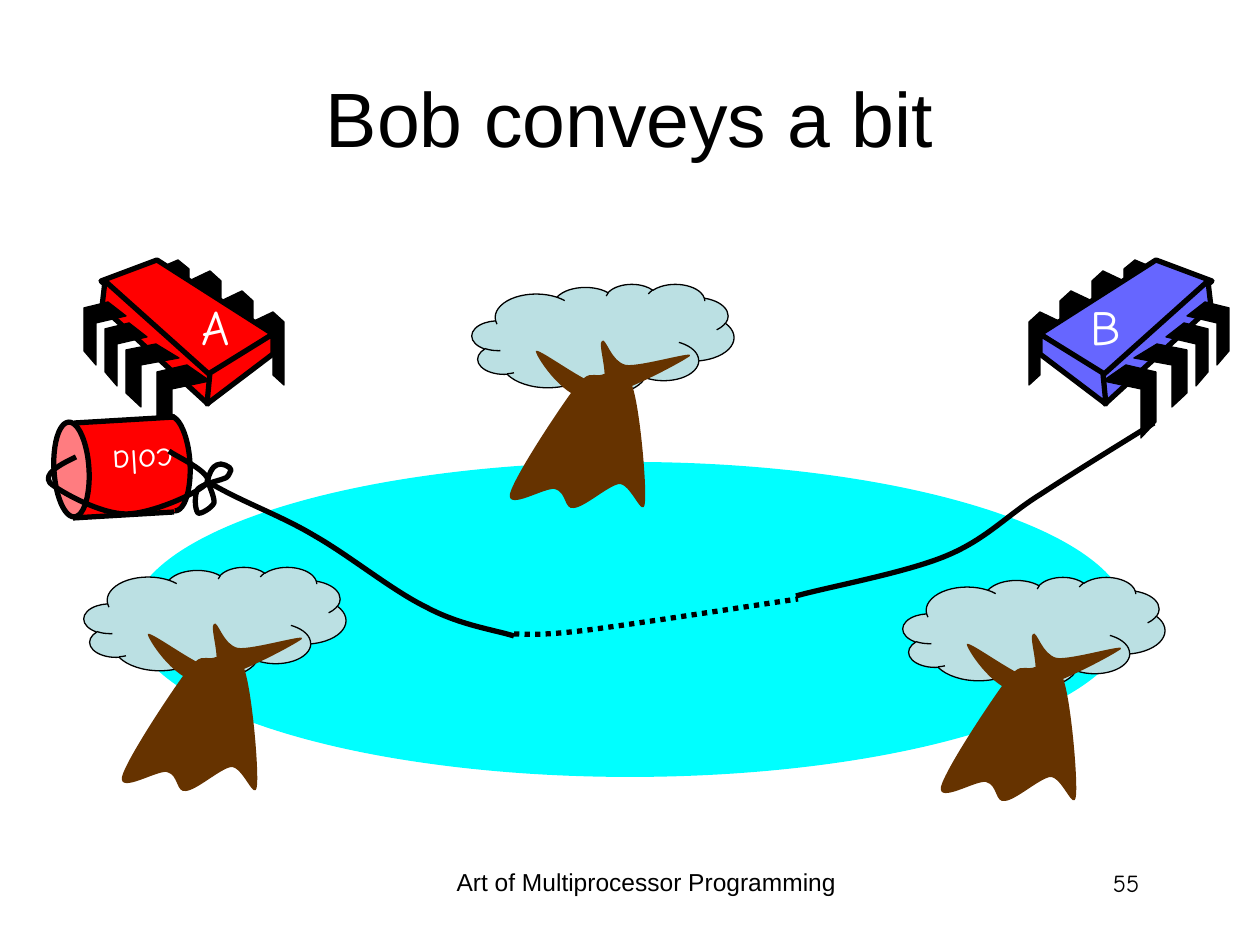
from dataclasses import dataclass

from pptx import Presentation
from pptx.dml.color import RGBColor
from pptx.enum.dml import MSO_LINE
from pptx.enum.shapes import MSO_CONNECTOR, MSO_SHAPE
from pptx.enum.text import MSO_ANCHOR, PP_ALIGN
from pptx.oxml.ns import qn
from pptx.oxml.xmlchemy import OxmlElement
from pptx.util import Pt

SCALE = 914400 / 126
ELLIPSE, RECTANGLE = MSO_SHAPE.OVAL, MSO_SHAPE.RECTANGLE
CLOUD = MSO_SHAPE.CLOUD_CALLOUT
STRAIGHT = MSO_CONNECTOR.STRAIGHT
DOTTED = MSO_LINE.ROUND_DOT
CENTER, RIGHT = PP_ALIGN.CENTER, PP_ALIGN.RIGHT
TOP, MIDDLE = MSO_ANCHOR.TOP, MSO_ANCHOR.MIDDLE


@dataclass(frozen=True)
class Theme:
    black: str = "000000"
    white: str = "FFFFFF"
    red: str = "FF0000"
    pink: str = "FF7C80"
    blue: str = "6666FF"
    water: str = "00FFFF"
    leaf: str = "BBE0E3"
    bark: str = "663300"
    font: str = "Arial"
    hand_font: str = "Comic Neue"
    title_size: int = 44
    label_size: int = 28
    can_size: int = 20
    footer_size: int = 14
    thin: float = 0.75
    thick: float = 3


THEME = Theme()

# Chip outlines: legs are fractions of their box, panels are px
BACK_LEG = [(0, .14), (.67, 0), (1, .14), (1, 1), (.67, .86), (.67, .29), (0, .43)]
FRONT_LEG = [(.57, 0), (1, .22), (.29, .33), (.29, 1), (0, .78), (0, .1)]
BACK_BOXES = [(252, 312, 32, 73), (221, 291, 32, 73), (189, 271, 32, 73), (157, 260, 32, 63)]
FRONT_BOXES = [(157, 365, 53, 73), (126, 344, 53, 63), (105, 323, 42, 63), (84, 302, 42, 63)]
PANELS = [
    [(157, 260), (273, 334), (208, 377), (101, 281)],
    [(105, 281), (210, 375), (208, 404), (102, 307)],
    [(273, 334), (273, 354), (207, 404), (210, 373)],
]
MIRROR_WIDTH = 1313

# Curves: a start point, then two handles and an end point per segment
TRUNK = [
    (102, 105), (117, 86), (118, 92), (129, 91), (137, 89), (152, 79), (160, 101),
    (168, 122), (175, 203), (173, 219), (171, 236), (159, 199), (147, 200),
    (136, 202), (113, 223), (102, 224), (92, 226), (95, 208), (83, 205),
    (73, 203), (35, 227), (38, 210), (42, 193), (87, 125), (102, 105),
]
BRANCHES = [
    (64, 67), (62, 69), (89, 113), (115, 115), (141, 116), (212, 77), (218, 72),
    (224, 66), (169, 83), (154, 81), (139, 78), (134, 53), (130, 57),
    (125, 59), (139, 98), (129, 101), (117, 102), (67, 64), (64, 67),
]
BOW = [
    (208, 481), (208, 475), (213, 466), (217, 465), (221, 462), (231, 467), (231, 470),
    (229, 475), (228, 478), (223, 479), (218, 481), (203, 484), (198, 489),
    (194, 495), (195, 510), (198, 513), (200, 515), (212, 508), (214, 503),
    (215, 498), (209, 486), (208, 481),
]
LOOP = [
    (76, 457), (59, 465), (43, 474), (50, 483), (59, 491), (100, 514), (126, 514),
    (151, 514), (199, 493), (207, 483), (214, 473), (175, 456), (169, 451),
]
LEFT_ROPE = [
    (210, 483), (244, 503), (280, 515), (315, 536), (350, 556), (393, 591), (426, 607),
    (459, 625), (495, 630), (514, 636),
]
RIGHT_ROPE = [
    (1154, 423), (1135, 435), (1076, 471), (1041, 494), (1007, 515), (987, 539), (946, 556),
    (905, 573), (828, 587), (796, 596),
]
SUNK_ROPE = [(514, 634), (527, 634), (541, 636), (588, 630), (635, 624), (764, 604), (798, 599)]


def px(value):
    return round(value * SCALE)


def box_px(box):
    return [px(value) for value in box]


def paint(shape, fill=None, line=None, width=THEME.thin):
    shape.shadow.inherit = False
    if fill:
        shape.fill.solid()
        shape.fill.fore_color.rgb = RGBColor.from_string(fill)
    else:
        shape.fill.background()
    if line:
        shape.line.color.rgb = RGBColor.from_string(line)
        shape.line.width = Pt(width)
    else:
        shape.line.fill.background()


def add_preset(shapes, kind, box, rotation=0, **style):
    shape = shapes.add_shape(kind, *box_px(box))
    shape.rotation = rotation
    paint(shape, **style)
    return shape


def add_polygon(shapes, points, closed=True, **style):
    builder = shapes.build_freeform(*points[0], scale=SCALE)
    builder.add_line_segments(points[1:], close=closed)
    shape = builder.convert_to_shape()
    paint(shape, **style)
    return shape


def add_curve(shapes, points, closed=False, **style):
    shape = add_polygon(shapes, points, closed, **style)
    # Join every three line segments into one Bézier segment
    for path in shape._element.iter(qn("a:path")):
        segments = path.findall(qn("a:lnTo"))
        for start in range(0, len(segments), 3):
            curve = OxmlElement("a:cubicBezTo")
            segments[start].addprevious(curve)
            for segment in segments[start:start + 3]:
                curve.append(segment[0])
                path.remove(segment)
    return shape


def add_rope(shapes, points):
    return add_curve(shapes, points, line=THEME.black, width=THEME.thick)


def add_line(shapes, start, end):
    line = shapes.add_connector(STRAIGHT, *box_px(start + end))
    line.line.color.rgb = RGBColor.from_string(THEME.black)
    line.line.width = Pt(THEME.thick)
    line._element.spPr.append(OxmlElement("a:effectLst"))


def write(frame, text, size, font, color, align, anchor=TOP):
    frame.vertical_anchor = anchor
    paragraph = frame.paragraphs[0]
    paragraph.alignment = align
    run = paragraph.add_run()
    run.text = text
    run.font.size = Pt(size)
    run.font.name = font
    run.font.color.rgb = RGBColor.from_string(color)


def add_text(shapes, box, text, size, font, color, align, wrap=True, rotation=0):
    text_box = shapes.add_textbox(*box_px(box))
    text_box.rotation = rotation
    text_box.text_frame.word_wrap = wrap
    write(text_box.text_frame, text, size, font, color, align)


def add_chip(slide, color, mirrored=False):
    shapes = slide.shapes.add_group_shape().shapes

    def place(points):
        return [(MIRROR_WIDTH - x if mirrored else x, y) for x, y in points]

    def add_legs(outline, boxes):
        for left, top, width, height in boxes:
            points = [(left + x * width, top + y * height) for x, y in outline]
            add_polygon(shapes, place(points), fill=THEME.black, line=THEME.black)

    add_legs(BACK_LEG, BACK_BOXES)
    for panel in PANELS:
        add_polygon(shapes, place(panel), fill=color, line=THEME.black, width=THEME.thick)
    add_legs(FRONT_LEG, FRONT_BOXES)


def add_tree(slide, left, top):
    shapes = slide.shapes.add_group_shape().shapes
    crown = add_preset(shapes, CLOUD, (left, top, 262, 110), fill=THEME.leaf, line=THEME.black)
    crown.adjustments[0], crown.adjustments[1] = 0.02, 0.49
    for outline in (TRUNK, BRANCHES):
        points = [(left + x, top + y) for x, y in outline]
        add_curve(shapes, points, closed=True, fill=THEME.bark)


def add_can(slide):
    shapes = slide.shapes.add_group_shape().shapes
    edge = {"line": THEME.black, "width": THEME.thick}
    add_preset(shapes, ELLIPSE, (125, 446, 95, 35), 266.5, fill=THEME.red, **edge)
    add_preset(shapes, RECTANGLE, (74, 417, 95, 101), 266.5, fill=THEME.red)
    add_preset(shapes, ELLIPSE, (24, 452, 95, 35), 266.5, fill=THEME.pink, **edge)
    add_line(shapes, (73, 518), (174, 512))
    add_line(shapes, (74, 423), (175, 417))
    add_text(shapes, (100, 437, 90, 54), "cola", THEME.can_size, THEME.hand_font,
             THEME.white, RIGHT, wrap=False, rotation=176.5)


def main():
    presentation = Presentation()
    presentation.slide_width, presentation.slide_height = px(1260), px(945)
    slide = presentation.slides.add_slide(presentation.slide_layouts[5])
    shapes = slide.shapes

    # Title
    title = shapes.title
    title.left, title.top, title.width, title.height = box_px((63, 38, 1134, 157))
    write(title.text_frame, "Bob conveys a bit", THEME.title_size, THEME.font,
          THEME.black, CENTER, MIDDLE)

    # Chips and pond
    add_chip(slide, THEME.red)
    add_chip(slide, THEME.blue, mirrored=True)
    add_preset(shapes, ELLIPSE, (131, 462, 998, 315), fill=THEME.water)
    for text, box in (("A", (180, 290, 62, 72)), ("B", (1076, 290, 57, 72))):
        add_text(shapes, box, text, THEME.label_size, THEME.hand_font, THEME.white, RIGHT, wrap=False)

    # Trees
    for left, top in ((472, 284), (903, 577), (84, 567)):
        add_tree(slide, left, top)

    # Can and rope
    add_can(slide)
    for points in (BOW, LOOP, LEFT_ROPE, RIGHT_ROPE):
        add_rope(shapes, points)
    add_rope(shapes, SUNK_ROPE).line.dash_style = DOTTED

    # Footer
    add_text(shapes, (431, 861, 431, 66), "Art of Multiprocessor Programming",
             THEME.footer_size, THEME.font, THEME.black, CENTER)
    add_text(shapes, (890, 862, 262, 63), "55", THEME.footer_size, THEME.hand_font, THEME.black, RIGHT)

    presentation.save("out.pptx")


if __name__ == "__main__":
    main()
